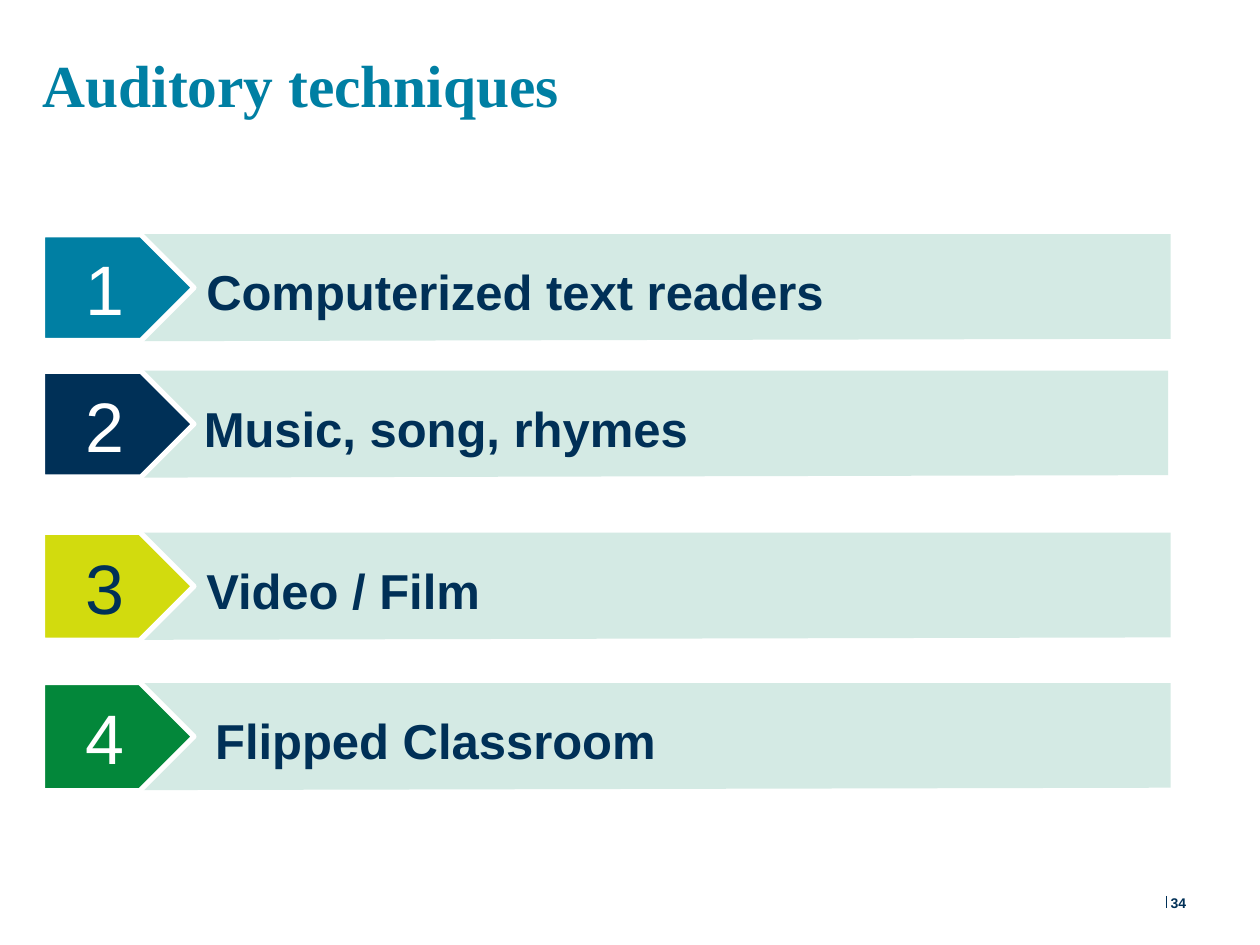
from pptx import Presentation
from pptx.dml.color import RGBColor as RGB
from pptx.enum.shapes import MSO_CONNECTOR as CONN, MSO_SHAPE as SHAPE
from pptx.enum.text import MSO_ANCHOR as ANCHOR, MSO_AUTO_SIZE as FIT, PP_ALIGN as ALIGN
from pptx.oxml.ns import qn
from pptx.util import Cm, Pt
from lxml.etree import SubElement

TITLE = "Auditory techniques"
PAGE = "34"
ROWS = [
    dict(text="Computerized text readers", top=4.72, right=23.6, height=2.13,
         text_left=3.91, fill="teal", ink="white"),
    dict(text="Music, song, rhymes", top=7.47, right=23.55, height=2.13,
         text_left=3.86, fill="navy", ink="white"),
    dict(text="Video / Film", top=10.74, right=23.6, height=2.18,
         text_left=3.91, fill="lime", ink="navy"),
    dict(text="Flipped Classroom", top=13.77, right=23.6, height=2.18,
         text_left=4.09, fill="green", ink="white"),
]
THEME = dict(
    colors=dict(teal="007FA3", navy="003057", lime="D2DB0E", green="03873A",
                mint="D4EAE4", white="FFFFFF"),
    heading="Times New Roman", body="Arial",
    title=34, number=40, label=28, page=8,
)
LEFT, PLATE_W = 0.86, 3.05
BAND_LEFT, BAND_FOOT, NOTCH, BAND_H, BAND_SLOPE = 2.39, 2.46, 3.48, 2.16, 0.05


def color(name):
    return RGB.from_string(THEME["colors"][name])


def write(sp, text, size, ink, bold=False, face="body", align=ALIGN.LEFT,
          anchor=ANCHOR.TOP, margin=None):
    tf = sp.text_frame
    tf.word_wrap = True
    tf.vertical_anchor = anchor
    if margin is not None:
        tf.margin_left = tf.margin_top = tf.margin_right = tf.margin_bottom = margin
    p = tf.paragraphs[0]
    p.text = text
    p.alignment = align
    p.font.name = THEME[face]
    p.font.size = Pt(THEME[size])
    p.font.bold = bold
    p.font.color.rgb = color(ink)
    return p


def paint(sp, fill):
    sp.shadow.inherit = False
    sp.fill.solid()
    sp.fill.fore_color.rgb = color(fill)


def add_row(shapes, number, row):
    top, right = row["top"], row["right"]
    middle, bottom = top + BAND_H / 2, top + BAND_H
    points = [(BAND_FOOT, bottom), (NOTCH, middle), (BAND_LEFT, top), (right, top)]
    pen = shapes.build_freeform(Cm(right), Cm(bottom - BAND_SLOPE))
    pen.add_line_segments([(Cm(x), Cm(y)) for x, y in points], close=True)
    band = pen.convert_to_shape()
    paint(band, "mint")
    band.line.fill.background()

    plate = shapes.add_shape(SHAPE.PENTAGON, Cm(LEFT), Cm(middle - row["height"] / 2),
                             Cm(PLATE_W), Cm(row["height"]))
    paint(plate, row["fill"])
    plate.line.color.rgb = color("white")
    plate.line.width = Pt(3)
    write(plate, str(number), "number", row["ink"], align=ALIGN.CENTER, anchor=ANCHOR.MIDDLE)

    label = shapes.add_textbox(Cm(row["text_left"]), Cm(top + 0.43),
                               Cm(right - row["text_left"]), Cm(1.45))
    write(label, row["text"], "label", "navy", bold=True)
    label.text_frame.auto_size = FIT.SHAPE_TO_FIT_TEXT


def main():
    prs = Presentation()
    prs.slide_width, prs.slide_height = Cm(25.4), Cm(19.05)
    s = prs.slides.add_slide(prs.slide_layouts[5])

    title = s.shapes.title
    title.left, title.top, title.width, title.height = Cm(LEFT), Cm(0.71), Cm(22.05), Cm(1.83)
    p = write(title, TITLE, "title", "teal", bold=True, face="heading", margin=0)
    p.line_spacing = 1.18
    title.text_frame.auto_size = FIT.NONE

    for number, row in enumerate(ROWS, 1):
        add_row(s.shapes.add_group_shape().shapes, number, row)

    rule = s.shapes.add_connector(CONN.STRAIGHT, Cm(23.52), Cm(18.06), Cm(23.52), Cm(18.31))
    rule.line.color.rgb = color("navy")
    rule.line.width = Pt(0.75)
    SubElement(rule._element.spPr, qn("a:effectLst"))
    page = s.shapes.add_textbox(Cm(23.6), Cm(18.03), Cm(1.19), Cm(0.36))
    write(page, PAGE, "page", "navy", bold=True, anchor=ANCHOR.MIDDLE, margin=0)

    prs.save("out.pptx")


if __name__ == "__main__":
    main()
